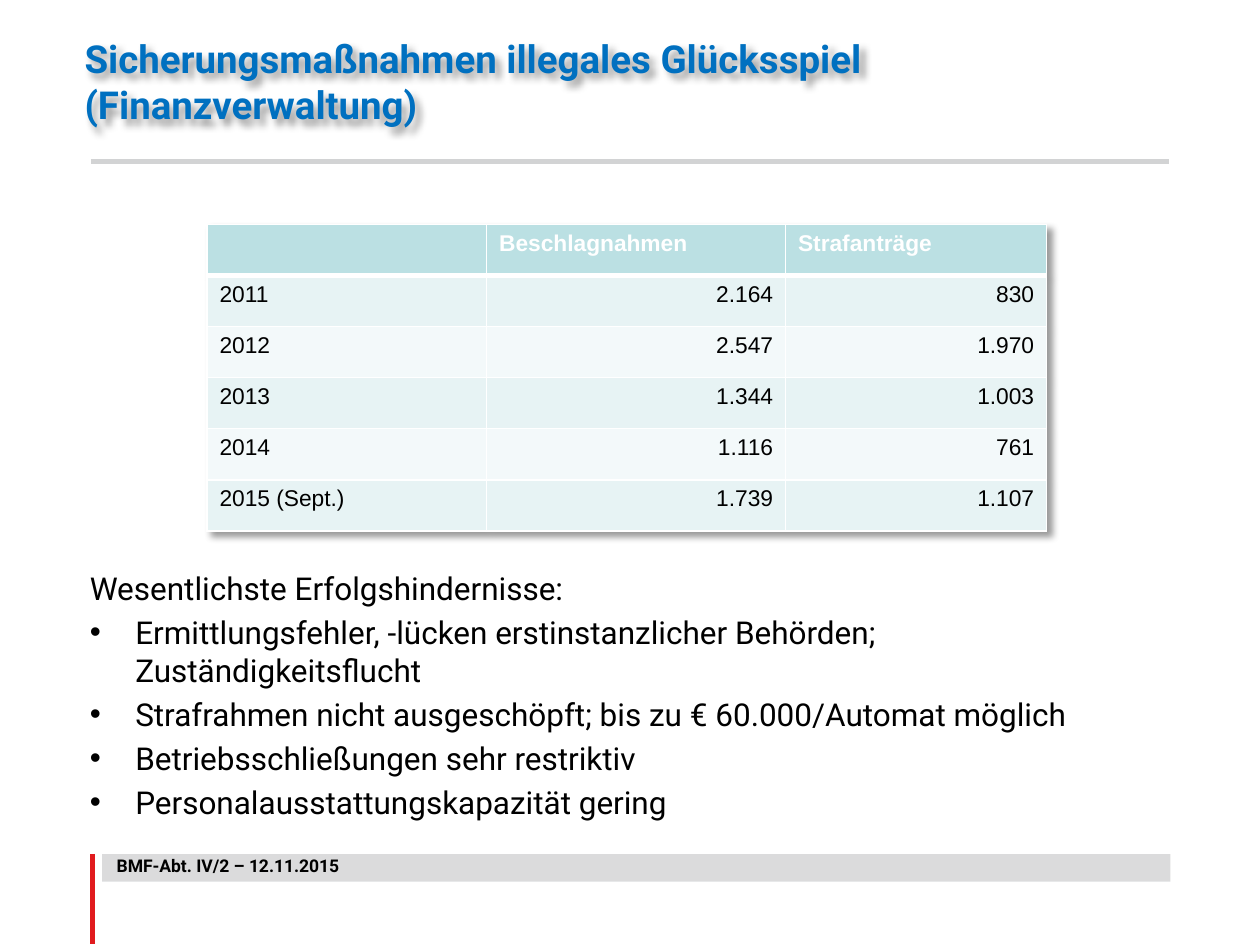
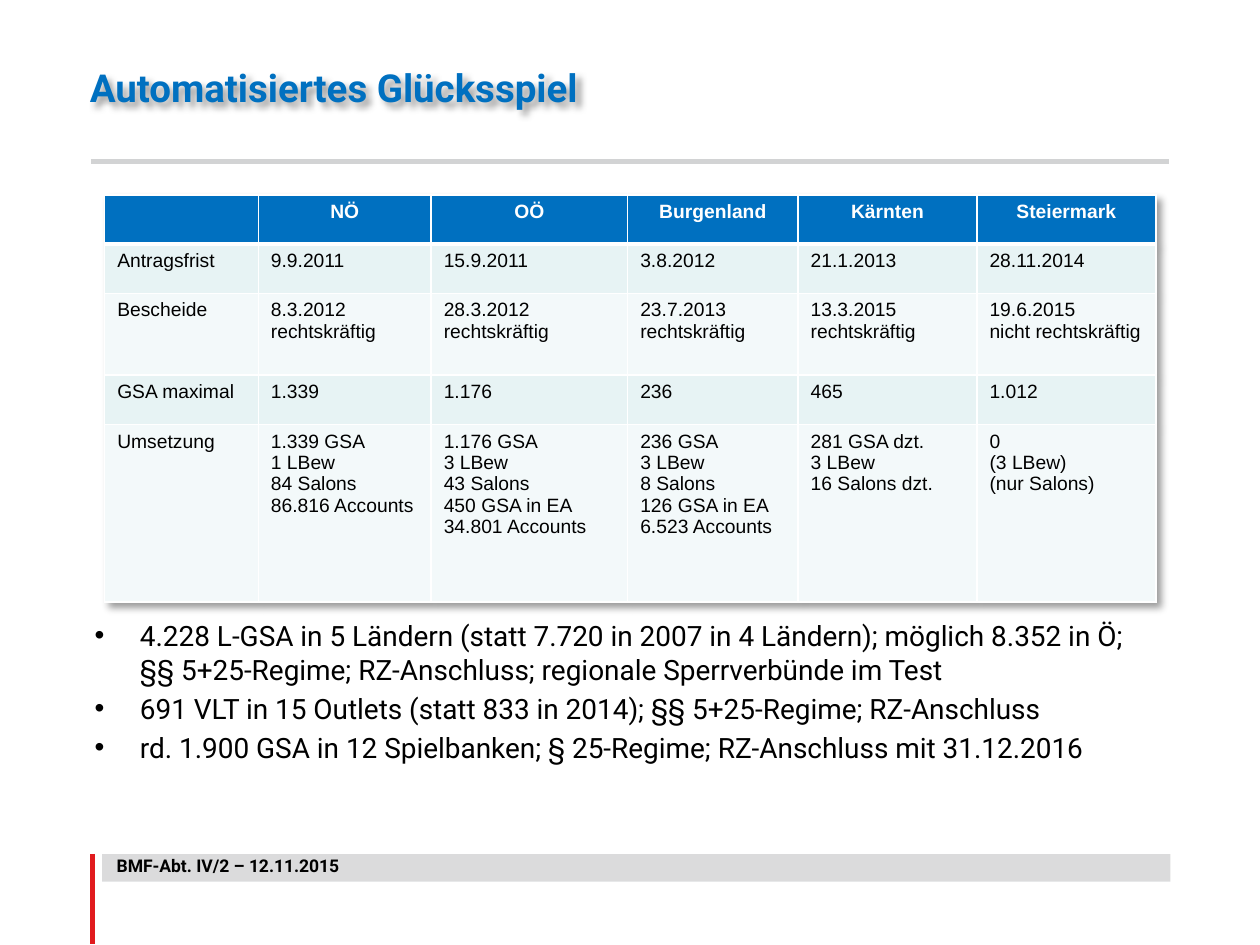
import dataclasses

import pptx
import pptx.dml.color
import pptx.enum.shapes
import pptx.enum.text
import pptx.oxml.ns
import pptx.util
from lxml import etree

Pt = pptx.util.Pt
qn = pptx.oxml.ns.qn
ALIGN = pptx.enum.text.PP_ALIGN
ANCHOR = pptx.enum.text.MSO_ANCHOR
AUTO_SIZE = pptx.enum.text.MSO_AUTO_SIZE


@dataclasses.dataclass(frozen=True)
class Theme:
    """Colours, fonts and sizes that all slides share."""
    blue: str = "0070C0"
    teal: str = "BBE0E3"
    red: str = "E11B1E"
    grey: str = "D2D3D4"
    black: str = "000000"
    white: str = "FFFFFF"
    stripes: tuple = ("E7F3F4", "F3F9FA")
    text_font: str = "Roboto"
    table_font: str = "Arial"
    title_size: float = 22
    footer_size: float = 10
    rule_width: float = 2.84
    bullet_indent: float = 26


THEME = Theme()
NO_MARGINS = dict.fromkeys(
    ("margin_left", "margin_top", "margin_right", "margin_bottom"), 0)


def rgb(colour):
    """Return a colour object for a hex value."""
    return pptx.dml.color.RGBColor.from_string(colour)


def apply_format(target, values):
    """Set every attribute named in a dict of format values."""
    for attribute, value in values.items():
        setattr(target, attribute, value)


def add_node(parent, tag, **attributes):
    """Append a drawing element and return it."""
    return etree.SubElement(parent, qn(tag), attributes)


def format_runs(paragraph, font, size, colour, bold=False):
    """Give all runs of a paragraph one font."""
    for run in paragraph.runs:
        apply_format(run.font, {"name": font, "size": Pt(size), "bold": bold})
        run.font.color.rgb = rgb(colour)


def place(shape, left, top, width, height):
    """Move and size a shape in points."""
    apply_format(shape, {"left": Pt(left), "top": Pt(top),
                         "width": Pt(width), "height": Pt(height)})


def soft_shadow():
    """Return an effect list with a soft shadow to the lower right."""
    effects = etree.Element(qn("a:effectLst"))
    shadow = add_node(effects, "a:outerShdw", blurRad="50800", dist="50800",
                      dir="2700000", algn="tl", rotWithShape="0")
    colour = add_node(shadow, "a:srgbClr", val=THEME.black)
    add_node(colour, "a:alpha", val="40000")
    return effects


def add_rule(slide, start, end, colour):
    """Draw a straight rule between two points."""
    rule = slide.shapes.add_connector(
        pptx.enum.shapes.MSO_CONNECTOR.STRAIGHT, *map(Pt, start + end))
    rule.line.color.rgb = rgb(colour)
    rule.line.width = Pt(THEME.rule_width)
    add_node(rule._element.spPr, "a:effectLst")


def add_frame(slide):
    """Add the header rule, footer mark, footer band and footer text."""
    add_rule(slide, (52, 92.2), (668, 92.2), THEME.grey)
    add_rule(slide, (52.6, 488), (52.6, 539.3), THEME.red)
    band = slide.shapes.add_shape(
        pptx.enum.shapes.MSO_SHAPE.RECTANGLE,
        Pt(58.3), Pt(488), Pt(610.5), Pt(15.8))
    band.shadow.inherit = False
    band.line.fill.background()
    band.fill.solid()
    band.fill.fore_color.rgb = rgb(THEME.grey)
    band_colour = band._element.spPr.find(".//" + qn("a:srgbClr"))
    add_node(band_colour, "a:alpha", val="80000")

    footer = slide.shapes.add_textbox(Pt(59.6), Pt(485.3), Pt(209.5), Pt(19.4))
    apply_format(footer.text_frame, {
        "word_wrap": True, "auto_size": AUTO_SIZE.SHAPE_TO_FIT_TEXT,
        "text": "BMF-Abt. IV/2 – 12.11.2015"})
    format_runs(footer.text_frame.paragraphs[0], THEME.text_font,
                THEME.footer_size, THEME.black, bold=True)


def set_title(slide, wording, left, top, width):
    """Fill and place the title."""
    title = slide.shapes.title
    place(title, left, top, width, 42.5)
    apply_format(title.text_frame, {
        **NO_MARGINS, "text": wording, "word_wrap": True,
        "auto_size": AUTO_SIZE.NONE, "vertical_anchor": ANCHOR.MIDDLE})
    title._element.spPr.append(soft_shadow())
    heading = title.text_frame.paragraphs[0]
    heading.alignment = ALIGN.LEFT
    format_runs(heading, THEME.text_font, THEME.title_size, THEME.blue, True)


def set_list(slide, points, box, size, lead=None):
    """Fill the body with bullet points below an optional lead line."""
    body = slide.placeholders[1]
    place(body, *box)
    lines = ([lead] if lead else []) + points
    apply_format(body.text_frame, {
        **NO_MARGINS, "text": "\n".join(lines), "word_wrap": True,
        "auto_size": AUTO_SIZE.NONE, "vertical_anchor": ANCHOR.TOP})
    for number, paragraph in enumerate(body.text_frame.paragraphs):
        bulleted = not (lead and number == 0)
        indent = Pt(THEME.bullet_indent) if bulleted else 0
        properties = paragraph._p.get_or_add_pPr()
        apply_attributes = {"marL": indent, "indent": -indent}
        for attribute, value in apply_attributes.items():
            properties.set(attribute, str(int(value)))
        if bulleted:
            add_node(properties, "a:buFont", typeface="Arial")
            add_node(properties, "a:buChar", char="•")
        else:
            add_node(properties, "a:buNone")
        apply_format(paragraph, {
            "alignment": ALIGN.LEFT,
            "space_before": Pt(0.2 * size if number else 0)})
        format_runs(paragraph, THEME.text_font, size, THEME.black)


def add_borders(cell, row_number):
    """Draw white cell borders, heavier below the header row."""
    heavy = {(0, "B"), (1, "T")}
    for side in "LRTB":
        width = Pt(3 if (row_number, side) in heavy else 1)
        border = add_node(cell._tc.get_or_add_tcPr(), "a:ln" + side,
                          w=str(int(width)))
        fill = add_node(border, "a:solidFill")
        add_node(fill, "a:srgbClr", val=THEME.white)


def fill_cell(cell, wording, row_number, fill, size, alignment):
    """Write and format one table cell."""
    header = row_number == 0
    add_borders(cell, row_number)
    cell.fill.solid()
    cell.fill.fore_color.rgb = rgb(fill)
    cell.text = wording
    for paragraph in cell.text_frame.paragraphs:
        paragraph.alignment = alignment
        format_runs(paragraph, THEME.table_font, size,
                    THEME.white if header else THEME.black, header)
        if not wording:
            add_node(paragraph._p, "a:endParaRPr", sz=str(size * 100))


def add_data_table(slide, rows, origin, widths, heights, size, header_fill,
                   header_alignment=ALIGN.LEFT, value_alignment=ALIGN.LEFT):
    """Add a striped table with a coloured header row."""
    table = slide.shapes.add_table(
        len(rows), len(widths), *map(Pt, origin),
        Pt(sum(widths)), Pt(sum(heights))).table
    table._tbl.tblPr.insert(0, soft_shadow())
    for column, width in zip(table.columns, widths):
        column.width = Pt(width)
    for row, height in zip(table.rows, heights):
        row.height = Pt(height)
    for row_number, row in enumerate(rows):
        header = row_number == 0
        fill = header_fill if header else THEME.stripes[(row_number - 1) % 2]
        for column_number, wording in enumerate(row):
            alignment = header_alignment if header else value_alignment
            if column_number == 0:
                alignment = ALIGN.LEFT
            fill_cell(table.cell(row_number, column_number), wording,
                      row_number, fill, size, alignment)


def add_content_slide(deck):
    """Add a slide with the shared frame."""
    slide = deck.slides.add_slide(deck.slide_layouts[1])
    add_frame(slide)
    return slide


def build_enforcement(deck):
    """Build the slide on measures against illegal gambling."""
    slide = add_content_slide(deck)
    set_title(slide, "Sicherungsmaßnahmen illegales Glücksspiel "
              "(Finanzverwaltung)", 48.3, 25.2, 482)
    rows = [
        ("", "Beschlagnahmen", "Strafanträge"),
        ("2011", "2.164", "830"),
        ("2012", "2.547", "1.970"),
        ("2013", "1.344", "1.003"),
        ("2014", "1.116", "761"),
        ("2015 (Sept.)", "1.739", "1.107"),
    ]
    add_data_table(slide, rows, (118.3, 128.2), (159.8, 170.8, 149.2),
                   [29.2] * len(rows), 13, THEME.teal,
                   value_alignment=ALIGN.RIGHT)
    obstacles = [
        "Ermittlungsfehler, -lücken erstinstanzlicher Behörden; "
        "Zuständigkeitsflucht",
        "Strafrahmen nicht ausgeschöpft; bis zu € 60.000/Automat möglich",
        "Betriebsschließungen sehr restriktiv",
        "Personalausstattungskapazität gering",
    ]
    set_list(slide, obstacles, (51.3, 325, 612, 150), 18,
             lead="Wesentlichste Erfolgshindernisse:")


def build_machines(deck):
    """Build the slide on automated gambling by province."""
    slide = add_content_slide(deck)
    set_title(slide, "Automatisiertes Glücksspiel", 51.3, 28.3, 475)
    rows = [
        ("", "NÖ", "OÖ", "Burgenland", "Kärnten", "Steiermark"),
        ("Antragsfrist", "9.9.2011", "15.9.2011", "3.8.2012", "21.1.2013",
         "28.11.2014"),
        ("Bescheide", "8.3.2012\vrechtskräftig", "28.3.2012\vrechtskräftig",
         "23.7.2013\nrechtskräftig", "13.3.2015\vrechtskräftig",
         "19.6.2015\nnicht rechtskräftig"),
        ("GSA maximal", "1.339", "1.176", "236", "465", "1.012"),
        ("Umsetzung",
         "1.339 GSA\n1 LBew\n84 Salons\n86.816 Accounts",
         "1.176 GSA\n3 LBew\n43 Salons\n450 GSA in EA\n34.801 Accounts",
         "236 GSA\n3 LBew\n8 Salons\n126 GSA in EA 6.523 Accounts",
         "281 GSA dzt.\n3 LBew\n16 Salons dzt.",
         "0\n(3 LBew)\n(nur Salons)"),
    ]
    add_data_table(slide, rows, (59.8, 111.4),
                   (87.8, 98.8, 112.3, 97.4, 102.2, 102.2),
                   (28.1, 28.1, 46.8, 28.1, 101.5), 11, THEME.blue,
                   header_alignment=ALIGN.CENTER)
    facts = [
        "4.228 L-GSA in 5 Ländern (statt 7.720 in 2007 in 4 Ländern); "
        "möglich 8.352 in Ö;\v§§ 5+25-Regime; RZ-Anschluss; "
        "regionale Sperrverbünde im Test",
        "691 VLT in 15 Outlets (statt 833 in 2014); §§ 5+25-Regime; "
        "RZ-Anschluss",
        "rd. 1.900 GSA in 12 Spielbanken; § 25-Regime; "
        "RZ-Anschluss mit 31.12.2016",
    ]
    set_list(slide, facts, (54, 353.5, 612, 115), 16)


def main():
    """Build and save the presentation."""
    deck = pptx.Presentation()
    apply_format(deck, {"slide_width": Pt(720), "slide_height": Pt(540)})
    build_enforcement(deck)
    build_machines(deck)
    deck.save("out.pptx")


if __name__ == "__main__":
    main()
